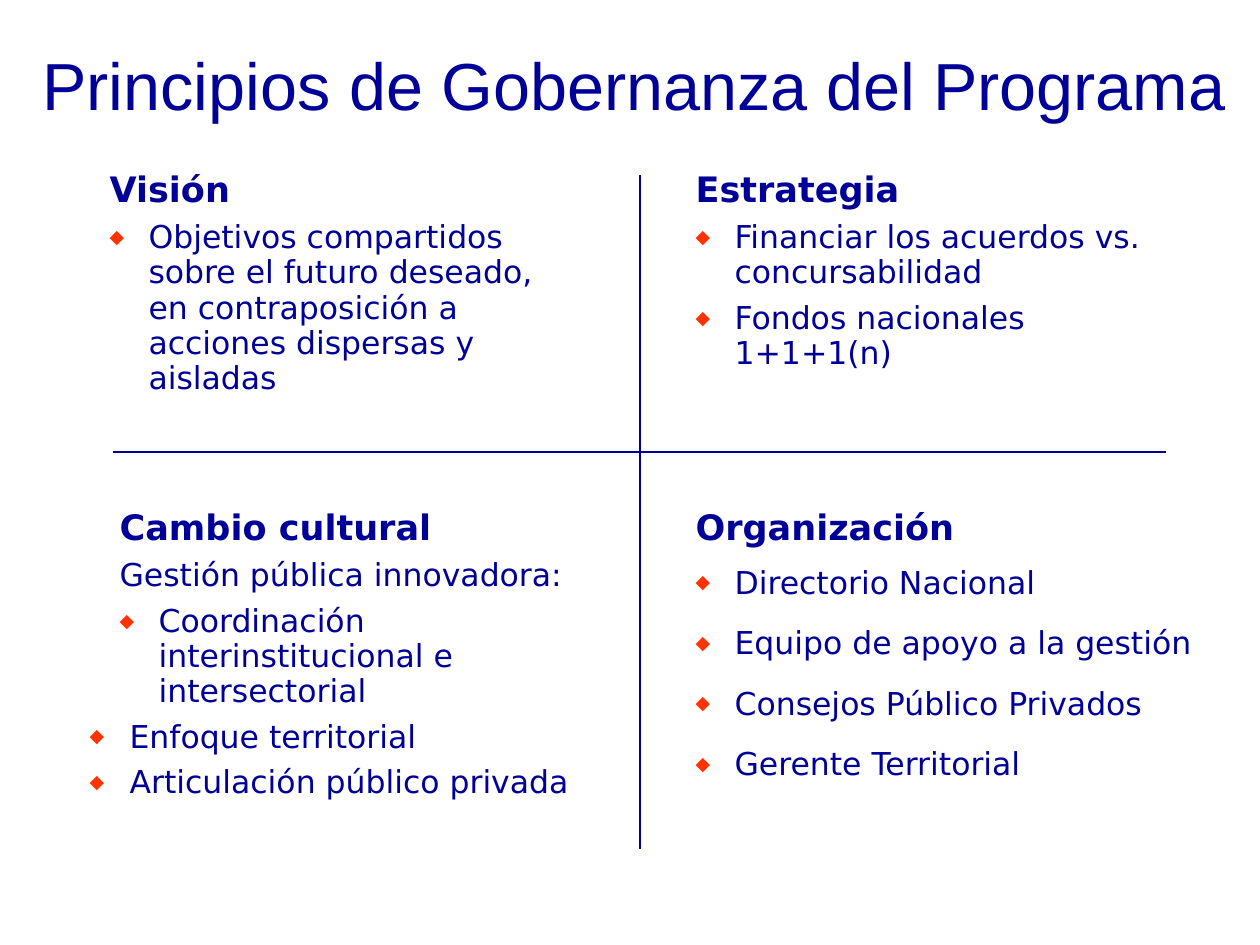
"""Build a slide with four governance principles in quadrants."""
from lxml import etree
from pptx import Presentation
from pptx.dml.color import RGBColor
from pptx.enum.shapes import MSO_CONNECTOR as Connector
from pptx.enum.text import MSO_ANCHOR as Anchor, MSO_AUTO_SIZE as AutoSize, PP_ALIGN as Align
from pptx.oxml.ns import qn
from pptx.util import Emu, Pt

SCALE = 914400 / 126
NAVY, RED = "000099", "FF3300"
HANGING, OUTDENTED = (102, -39), (73, -40)


def color(value):
    return RGBColor.from_string(value)


def format_paragraph(paragraph, text, size, font, indents, bold=False, bullet=False, before=0, after=0):
    paragraph.text = text
    paragraph.line_spacing = 0.93
    paragraph.space_before, paragraph.space_after = Pt(before), Pt(after)
    properties = paragraph._p.get_or_add_pPr()
    for name, length in zip(("marL", "indent"), indents):
        properties.set(name, str(round(length * SCALE)))
    if bullet:
        bullet_color = etree.SubElement(properties, qn("a:buClr"))
        etree.SubElement(bullet_color, qn("a:srgbClr"), val=RED)
        etree.SubElement(properties, qn("a:buSzPct"), val="60000")
        etree.SubElement(properties, qn("a:buFont"), typeface="DejaVu Sans")
        etree.SubElement(properties, qn("a:buChar"), char="◆")
    else:
        etree.SubElement(properties, qn("a:buNone"))
    paragraph.font.size, paragraph.font.name = Pt(size), font
    paragraph.font.bold = bold
    paragraph.font.color.rgb = color(NAVY)


presentation = Presentation()
presentation.slide_width, presentation.slide_height = Emu(9144000), Emu(6858000)
slide = presentation.slides.add_slide(presentation.slide_layouts.get_by_name("Comparison"))

for ends in ((640, 175, 640, 849), (113, 452, 1166, 452)):
    divider = slide.shapes.add_connector(Connector.STRAIGHT, *[Emu(round(end * SCALE)) for end in ends])
    divider.line.color.rgb = color(NAVY)
    divider.line.width = Pt(0.75)
    etree.SubElement(divider._element.spPr, qn("a:effectLst"))

quadrants = [
    (1, (34, 165, 536, 238), "Visión", (5.9, 0, 0), [
        ("Objetivos compartidos sobre el futuro deseado, en contraposición a acciones dispersas y aisladas",
         HANGING, True)]),
    (2, (620, 165, 566, 258), "Estrategia", (5.9, 0, 0), [
        ("Financiar los acuerdos vs. concursabilidad", HANGING, True),
        ("Fondos nacionales 1+1+1(n)", HANGING, True)]),
    (3, (44, 503, 586, 350), "Cambio cultural", (5.9, 0, 0), [
        ("Gestión pública innovadora:", HANGING, False),
        ("Coordinación interinstitucional e intersectorial", HANGING, True),
        ("Enfoque territorial", OUTDENTED, True),
        ("Articulación público privada", OUTDENTED, True)]),
    (4, (620, 503, 600, 304), "Organización", (1, 9, 13.5), [
        ("Directorio Nacional", HANGING, True),
        ("Equipo de apoyo a la gestión", HANGING, True),
        ("Consejos Público Privados", HANGING, True),
        ("Gerente Territorial", HANGING, True)]),
]

placeholders = {shape.placeholder_format.idx: shape for shape in slide.placeholders}
boxes = [(0, (-54, 45, 1314, 87))] + [quadrant[:2] for quadrant in quadrants]
for index, box in boxes:
    shape = placeholders[index]
    shape.left, shape.top, shape.width, shape.height = [Emu(round(length * SCALE)) for length in box]
    shape.text_frame.word_wrap = True
    shape.text_frame.auto_size = AutoSize.NONE
    shape.text_frame.vertical_anchor = Anchor.TOP

title = slide.shapes.title.text_frame.paragraphs[0]
format_paragraph(title, "Principios de Gobernanza del Programa", 38, "Arial", HANGING)
title.alignment = Align.CENTER

for index, box, heading, (before, heading_after, item_after), items in quadrants:
    frame = placeholders[index].text_frame
    format_paragraph(frame.paragraphs[0], heading, 20, "DejaVu Sans", HANGING,
                     bold=True, before=before, after=heading_after)
    for text, indents, bullet in items:
        format_paragraph(frame.add_paragraph(), text, 18, "DejaVu Sans", indents,
                         bullet=bullet, before=before, after=item_after)

presentation.save("out.pptx")
